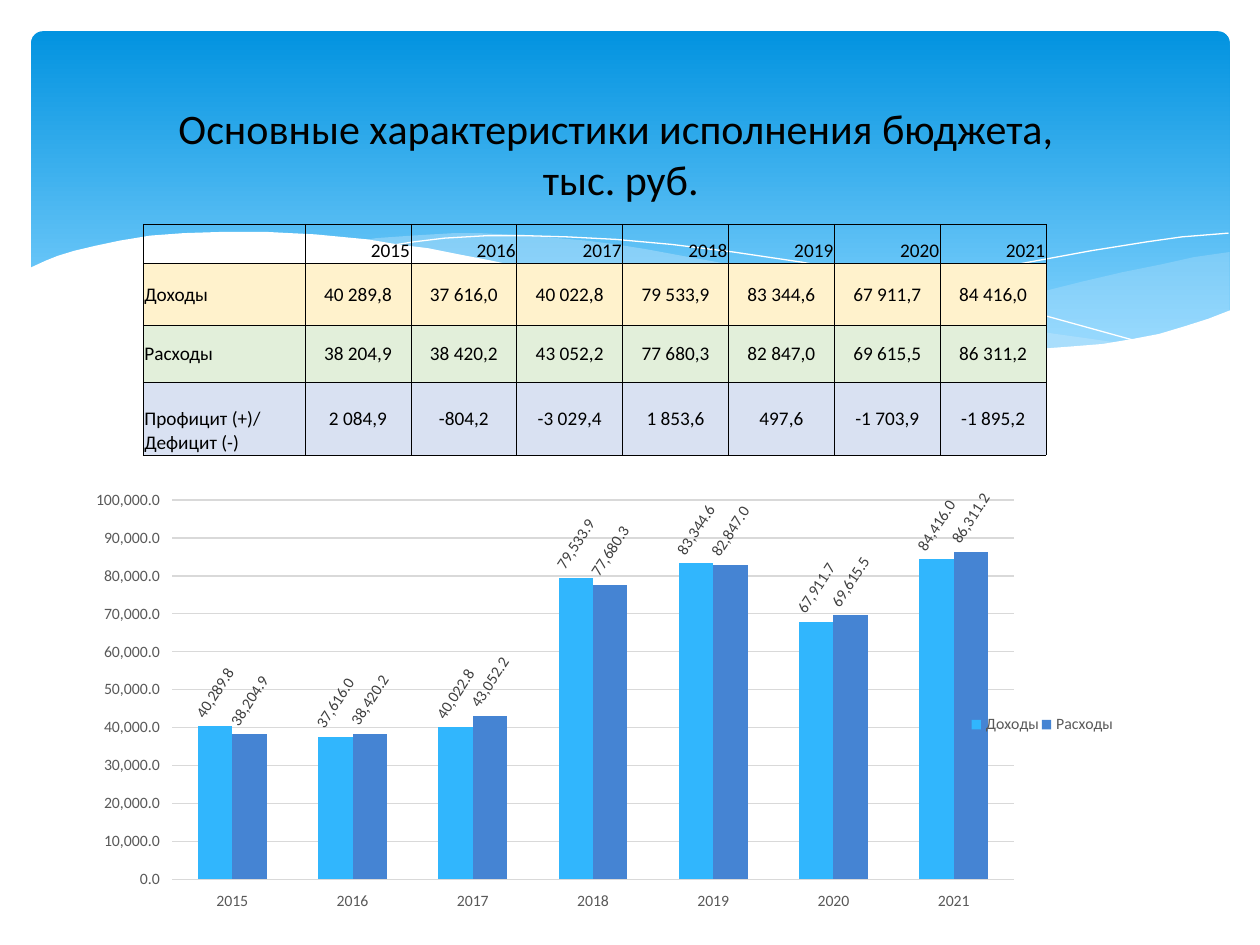
from lxml import etree
from pptx import Presentation
from pptx import util as u
from pptx.chart.data import CategoryChartData
from pptx.dml.color import RGBColor
from pptx.enum import chart as ch, shapes, text
from pptx.oxml.ns import qn

FONT = "Calibri"
BLACK = RGBColor(0x00, 0x00, 0x00)
WHITE = RGBColor(0xFF, 0xFF, 0xFF)
SKY_TOP = RGBColor(0x02, 0x93, 0xE0)
SKY_BOTTOM = RGBColor(0x83, 0xD3, 0xFE)
MIST = RGBColor(0xC6, 0xE7, 0xFC)
CREAM = RGBColor(0xFF, 0xF2, 0xCC)
MINT = RGBColor(0xE2, 0xEF, 0xDA)
LILAC = RGBColor(0xD9, 0xE1, 0xF2)
GRID = RGBColor(0xD9, 0xD9, 0xD9)
AXIS_TEXT = RGBColor(0x59, 0x59, 0x59)
LABEL_TEXT = RGBColor(0x40, 0x40, 0x40)
INCOME_BAR = RGBColor(0x31, 0xB6, 0xFD)
EXPENSE_BAR = RGBColor(0x45, 0x84, 0xD3)

TITLE = ["Основные характеристики исполнения бюджета, ", "тыс. руб."]
YEARS = ["2015", "2016", "2017", "2018", "2019", "2020", "2021"]
INCOME = [40289.8, 37616.0, 40022.8, 79533.9, 83344.6, 67911.7, 84416.0]
EXPENSES = [38204.9, 38420.2, 43052.2, 77680.3, 82847.0, 69615.5, 86311.2]
BALANCE = [2084.9, -804.2, -3029.4, 1853.6, 497.6, -1703.9, -1895.2]
# label, values, fill, row height in cm
BUDGET_ROWS = [
    ("Доходы", INCOME, CREAM, 1.25),
    ("Расходы", EXPENSES, MINT, 1.15),
    ("Профицит (+)/ Дефицит (-)", BALANCE, LILAC, 1.47),
]
HEADER_HEIGHT, LABEL_WIDTH, YEAR_WIDTH = 0.73, 3.26, 2.135
SERIES = [("Доходы", INCOME, INCOME_BAR), ("Расходы", EXPENSES, EXPENSE_BAR)]

# Wave outlines, in hundredths of an inch
WAVE_UNIT = u.Cm(2.54) / 100
RIGHT_WAVE = [
    (976, 200), (948, 204), (921, 210), (891, 216), (861, 223), (805, 237), (753, 248),
    (706, 257), (661, 265), (691, 269), (719, 272), (745, 275), (769, 277), (803, 278),
    (835, 277), (863, 275), (889, 272), (913, 267), (935, 262), (949, 257), (976, 247)]
MIDDLE_WAVE = [
    (893, 273), (866, 269), (837, 265), (807, 260), (775, 254), (741, 247), (706, 240),
    (668, 231), (629, 222), (598, 214), (569, 208), (541, 203), (514, 198), (489, 194),
    (465, 191), (442, 189), (420, 187), (399, 186), (380, 185), (361, 185), (328, 187),
    (299, 189), (286, 191), (323, 196), (362, 203), (404, 211), (449, 222), (491, 232),
    (530, 240), (566, 248), (601, 255), (634, 261), (665, 266), (695, 270), (722, 274),
    (748, 276), (773, 277), (796, 278), (828, 278), (857, 277), (876, 275)]
FRONT_WAVE = [
    (977, 246), (959, 253), (940, 259), (920, 265), (899, 269), (875, 273), (850, 275),
    (823, 277), (793, 276), (761, 275), (726, 272), (688, 268), (648, 262), (603, 254),
    (555, 245), (503, 233), (447, 220), (418, 213), (391, 207), (365, 202), (340, 197),
    (316, 194), (292, 190), (271, 188), (250, 186), (230, 185), (211, 184), (177, 184),
    (146, 185), (119, 187), (95, 191), (76, 195), (59, 199), (46, 203), (36, 207),
    (23, 213), (23, 329), (977, 329)]
LONG_LINE = [
    (309, 195), (328, 192), (353, 189), (387, 187), (416, 187), (450, 188), (489, 190),
    (533, 194), (582, 200), (636, 208), (695, 219), (760, 233), (831, 251), (907, 272)]
SHORT_LINE = [
    (613, 257), (653, 246), (695, 235), (748, 223), (806, 210), (866, 199), (910, 192),
    (938, 188), (963, 186), (975, 185)]


def add_wave(slide, points, color, alpha=100, closed=True):
    """Closed waves are filled, open ones are hairlines."""
    fb = slide.shapes.build_freeform(*points[0], scale=WAVE_UNIT)
    fb.add_line_segments(points[1:], close=closed)
    sp = fb.convert_to_shape()
    sp.shadow.inherit = False
    if not closed:
        sp.fill.background()
        sp.line.color.rgb = color
        sp.line.width = 0
        return
    sp.fill.solid()
    sp.fill.fore_color.rgb = color
    sp.line.fill.background()
    clr = sp.fill._xPr.find(".//" + qn("a:srgbClr"))
    etree.SubElement(clr, qn("a:alpha"), val=str(alpha * 1000))


def add_backdrop(slide):
    sp = slide.shapes.add_shape(shapes.MSO_SHAPE.ROUNDED_RECTANGLE,
                                u.Cm(0.63), u.Cm(0.63), u.Cm(24.16), u.Cm(6.86))
    sp.adjustments[0] = 0.034
    sp.shadow.inherit = False
    sp.line.fill.background()
    sp.fill.gradient()
    sp.fill.gradient_angle = 270
    for stop, color, pos in zip(sp.fill.gradient_stops, (SKY_TOP, SKY_BOTTOM), (0, 0.9)):
        stop.color.rgb = color
        stop.position = pos
    add_wave(slide, RIGHT_WAVE, MIST, 29)
    add_wave(slide, MIDDLE_WAVE, MIST, 40)
    add_wave(slide, LONG_LINE, WHITE, closed=False)
    add_wave(slide, SHORT_LINE, WHITE, closed=False)
    add_wave(slide, FRONT_WAVE, WHITE)


def style_font(font, size, color):
    font.name, font.size = FONT, u.Pt(size)
    font.color.rgb = color


def add_title(slide):
    tf = slide.shapes.add_textbox(u.Cm(1.91), u.Cm(1.93), u.Cm(21.21), u.Cm(2.31)).text_frame
    tf.word_wrap = True
    tf.vertical_anchor = text.MSO_ANCHOR.MIDDLE
    tf.text = "\n".join(TITLE)
    for p in tf.paragraphs:
        p.alignment = text.PP_ALIGN.CENTER
        style_font(p.runs[0].font, 24, BLACK)


def format_cell(cell, content, align, anchor, fill):
    cell.text = content
    cell.vertical_anchor = anchor
    cell.margin_left = cell.margin_right = cell.margin_top = u.Cm(0.02)
    cell.margin_bottom = 0
    p = cell.text_frame.paragraphs[0]
    p.alignment = align
    r = p.runs[0] if p.runs else p.add_run()
    style_font(r.font, 11, BLACK)
    tc_pr = cell._tc.get_or_add_tcPr()
    for side in ("lnL", "lnR", "lnT", "lnB"):
        ln = etree.SubElement(tc_pr, qn("a:" + side), w=str(u.Pt(0.5)))
        solid = etree.SubElement(ln, qn("a:solidFill"))
        etree.SubElement(solid, qn("a:srgbClr"), val=str(BLACK))
    if fill is None:
        cell.fill.background()
    else:
        cell.fill.solid()
        cell.fill.fore_color.rgb = fill


def russian(value):
    return f"{value:,.1f}".replace(",", " ").replace(".", ",")


def add_budget_table(slide):
    al, anc = text.PP_ALIGN, text.MSO_ANCHOR
    heights = [HEADER_HEIGHT] + [row[3] for row in BUDGET_ROWS]
    widths = [LABEL_WIDTH] + [YEAR_WIDTH] * len(YEARS)
    tbl = slide.shapes.add_table(len(heights), len(widths), u.Cm(2.89), u.Cm(4.52),
                                 u.Cm(sum(widths)), u.Cm(sum(heights))).table
    tbl.first_row = tbl.horz_banding = False
    for col, width in zip(tbl.columns, widths):
        col.width = u.Cm(width)
    for row, height in zip(tbl.rows, heights):
        row.height = u.Cm(height)
    for c, content in enumerate([""] + YEARS):
        format_cell(tbl.cell(0, c), content, al.RIGHT, anc.BOTTOM, None)
    for r, (label, values, fill, _) in enumerate(BUDGET_ROWS, 1):
        anchor = anc.BOTTOM if values is BALANCE else anc.MIDDLE
        format_cell(tbl.cell(r, 0), label, al.LEFT, anchor, fill)
        for c, value in enumerate(values, 1):
            format_cell(tbl.cell(r, c), russian(value), al.CENTER, anc.MIDDLE, fill)


def set_layout(element, before, x, y, w, h, inner=False):
    """Place a chart part by fractions of the chart area."""
    for old in element.findall(qn("c:layout")):
        element.remove(old)
    layout = etree.Element(qn("c:layout"))
    manual = etree.SubElement(layout, qn("c:manualLayout"))
    items = [("layoutTarget", "inner")] if inner else []
    items += [("xMode", "edge"), ("yMode", "edge"), ("x", x), ("y", y), ("w", w), ("h", h)]
    for tag, val in items:
        etree.SubElement(manual, qn("c:" + tag), val=str(val))
    element.find(qn(before)).addprevious(layout)


def add_budget_chart(slide):
    data = CategoryChartData(number_format="#,##0.0")
    data.categories = YEARS
    for name, values, _ in SERIES:
        data.add_series(name, values)
    chart = slide.shapes.add_chart(ch.XL_CHART_TYPE.COLUMN_CLUSTERED, u.Cm(1.5), u.Cm(9.73),
                                   u.Cm(21.21), u.Cm(8.79), data).chart
    style_font(chart.font, 10, BLACK)
    chart.has_title = False
    chart.has_legend = True
    chart.legend.position = ch.XL_LEGEND_POSITION.RIGHT
    chart.legend.include_in_layout = False
    style_font(chart.legend.font, 9, AXIS_TEXT)
    for axis in (chart.category_axis, chart.value_axis):
        style_font(axis.tick_labels.font, 9, AXIS_TEXT)
        axis.format.line.fill.background()
    axis = chart.value_axis
    axis.minimum_scale, axis.maximum_scale, axis.major_unit = 0, 100000, 10000
    axis.tick_labels.number_format = "#,##0.0"
    axis.tick_labels.number_format_is_linked = False
    axis.major_gridlines.format.line.color.rgb = GRID
    axis.major_gridlines.format.line.width = u.Pt(0.75)
    plot = chart.plots[0]
    plot.gap_width, plot.overlap, plot.vary_by_categories = 150, 0, False
    for series, (_, _, color) in zip(plot.series, SERIES):
        series.format.fill.solid()
        series.format.fill.fore_color.rgb = color
        labels = series.data_labels
        labels.show_value = True
        labels.position = ch.XL_LABEL_POSITION.OUTSIDE_END
        style_font(labels.font, 9, LABEL_TEXT)
        body = labels._element.find(".//" + qn("a:bodyPr"))
        body.set("rot", str(-57 * 60000))
        body.set("vert", "horz")
    set_layout(chart._chartSpace.find(".//" + qn("c:plotArea")), "c:barChart",
               0.093, 0.04, 0.8, 0.87, inner=True)
    set_layout(chart.legend._element, "c:overlay", 0.85, 0.53, 0.14, 0.05)


def main():
    prs = Presentation()
    prs.slide_width, prs.slide_height = u.Cm(25.4), u.Cm(19.05)
    slide = prs.slides.add_slide(prs.slide_layouts[6])
    add_backdrop(slide)
    add_title(slide)
    add_budget_table(slide)
    add_budget_chart(slide)
    prs.save("out.pptx")


if __name__ == "__main__":
    main()
